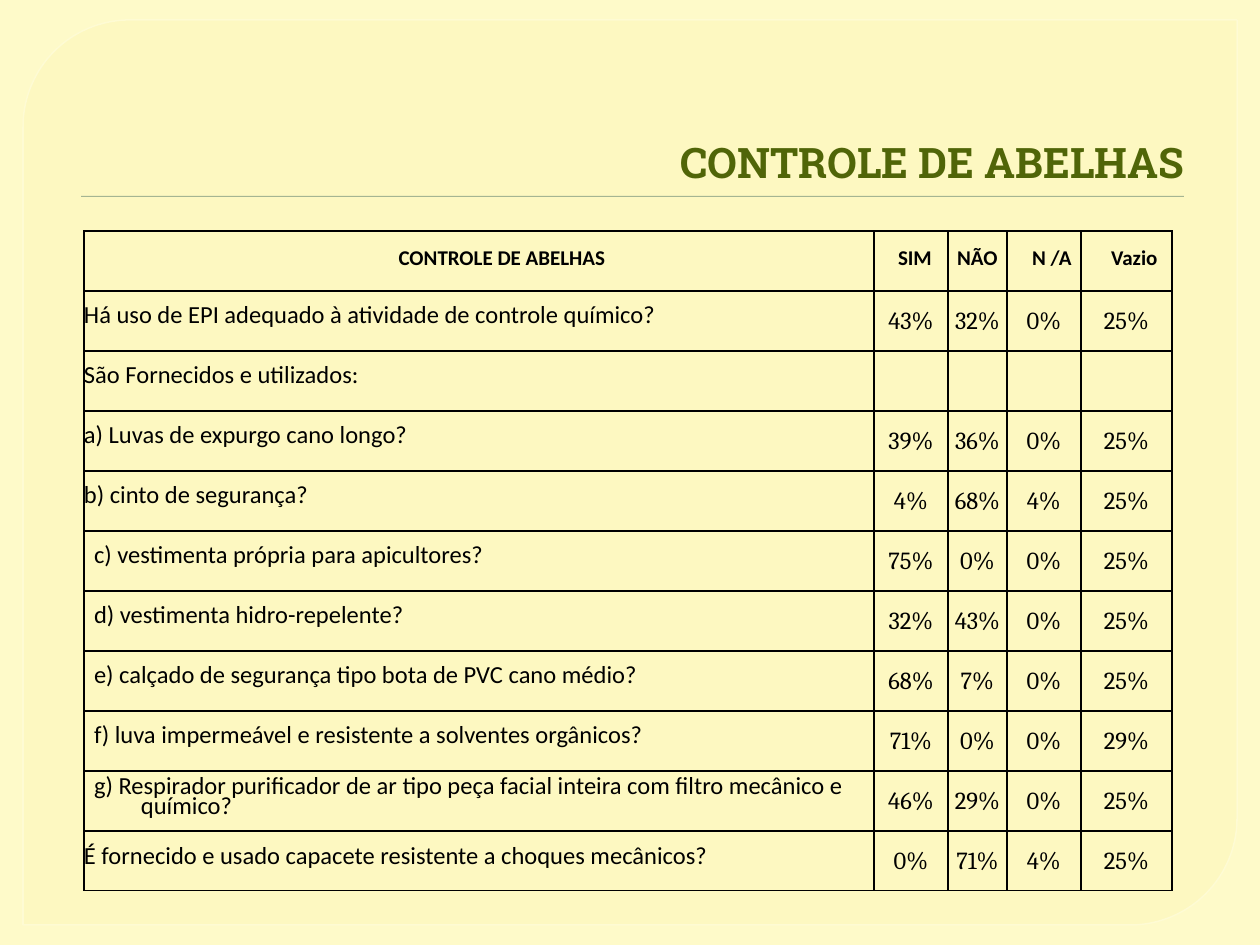
from lxml import etree
from pptx import Presentation
from pptx import util as u
from pptx.dml.color import RGBColor
from pptx.enum import shapes, text
from pptx.oxml import ns

COLORS = {
    "back": "FEFAC9", "panel": "FDF8BE", "edge": "FFFCD6",
    "rule": "A5B592", "title": "506508", "ink": "000000",
}
COLS = [790, 74, 59, 74, 91]
ROW = 60
HANG = 47
# label, left margin, line spacing in points
HEADS = [
    ("CONTROLE DE ABELHAS", 78, 11.2), ("SIM", 40, 11.3), ("NÃO", 32, 11.3),
    ("N /A", 48, 11.5), ("Vazio", 48, 11.5),
]
# question, left margin, line spacing in points, percentages
ROWS = [
    ("Há uso de EPI adequado à atividade de controle químico?", 47, 10.5, [43, 32, 0, 25]),
    ("São Fornecidos e utilizados:", 47, 10.5, []),
    ("a) Luvas de expurgo cano longo?", 47, 10.5, [39, 36, 0, 25]),
    ("b) cinto de segurança?", 47, 10.5, [4, 68, 4, 25]),
    ("c) vestimenta própria para apicultores?", 57, 10.5, [75, 0, 0, 25]),
    ("d) vestimenta hidro-repelente?", 57, 10.5, [32, 43, 0, 25]),
    ("e) calçado de segurança tipo bota de PVC cano médio?", 57, 10.5, [68, 7, 0, 25]),
    ("f) luva impermeável e resistente a solventes orgânicos?", 57, 10.5, [71, 0, 0, 29]),
    ("g) Respirador purificador de ar tipo peça facial inteira com filtro mecânico e químico?",
     57, 11.5, [46, 29, 0, 25]),
    ("É fornecido e usado capacete resistente a choques mecânicos?", 47, 11.5, [0, 71, 4, 25]),
]
LEFT, MID, RIGHT = text.PP_ALIGN.LEFT, text.PP_ALIGN.CENTER, text.PP_ALIGN.RIGHT


def px(n):
    return u.Emu(round(n * 914400 / 126))


def rgb(name):
    return RGBColor.from_string(COLORS[name])


def sub(node, tag, **attrs):
    item = etree.SubElement(node, ns.qn(tag))
    for key, val in attrs.items():
        item.set(key, str(val))
    return item


def fade(fill, pct):
    """Make a solid fill partly transparent."""
    for node in fill.iter(ns.qn("a:srgbClr")):
        sub(node, "a:alpha", val=pct * 1000)


def write(para, words, align, left, hang, space, **font):
    para.alignment = align
    para.line_spacing = space
    props = para._p.get_or_add_pPr()
    props.set("marL", str(px(left)))
    props.set("indent", str(px(-hang)))
    run = para.add_run()
    run.text = words
    color = font.pop("color", "ink")
    for key, val in font.items():
        setattr(run.font, key, val)
    run.font.color.rgb = rgb(color)


def block(slide, kind, box, fill):
    shape = slide.shapes.add_shape(kind, *map(px, box))
    shape.shadow.inherit = False
    shape.fill.solid()
    shape.fill.fore_color.rgb = rgb(fill)
    shape.line.fill.background()
    return shape


def panel(slide):
    shape = block(slide, shapes.MSO_SHAPE.ROUND_2_DIAG_RECTANGLE, (23, 20, 1214, 905), "panel")
    shape.adjustments[0] = 0.118
    shape.adjustments[1] = 0
    fade(shape._element.spPr.find(ns.qn("a:solidFill")), 65)
    shape.line.color.rgb = rgb("edge")
    shape.line.width = u.Pt(0.87)
    fade(shape._element.spPr.find(ns.qn("a:ln")), 88)


def rule(slide):
    shape = block(slide, shapes.MSO_SHAPE.RECTANGLE, (81, 196, 1103, 1), "rule")
    effects = shape._element.spPr.find(ns.qn("a:effectLst"))
    shade = sub(effects, "a:outerShdw", blurRad=12700, dist=12700, dir=5400000)
    sub(sub(shade, "a:srgbClr", val=COLORS["ink"]), "a:alpha", val=75000)


def title(slide):
    frame = slide.shapes.add_textbox(*map(px, (63, 35, 1134, 158))).text_frame
    frame.word_wrap = True
    frame.vertical_anchor = text.MSO_ANCHOR.BOTTOM
    write(frame.paragraphs[0], "CONTROLE DE ABELHAS", RIGHT, 8, 0, 1.0,
          name="Roboto Slab", size=u.Pt(24), bold=True, color="title")


def dress(cell):
    """Give a cell its borders, no fill and no margins."""
    props = cell._tc.get_or_add_tcPr()
    for side in ("L", "R", "T", "B"):
        line = sub(props, "a:ln" + side, w=12700)
        sub(sub(line, "a:solidFill"), "a:srgbClr", val=COLORS["ink"])
    cell.fill.background()
    cell.vertical_anchor = text.MSO_ANCHOR.MIDDLE
    for side in ("left", "right", "top", "bottom"):
        setattr(cell, "margin_" + side, 0)


def grid(slide):
    count = len(ROWS) + 1
    frame = slide.shapes.add_table(count, len(COLS), px(84), px(231),
                                   px(sum(COLS)), px(ROW * count))
    table = frame.table
    table.first_row = table.horz_banding = False
    for col, width in zip(table.columns, COLS):
        col.width = px(width)
    for row in table.rows:
        row.height = px(ROW)
    for cell in table.iter_cells():
        dress(cell)

    def put(row, col, *args, **font):
        write(table.cell(row, col).text_frame.paragraphs[0], *args, **font)

    for col, (words, left, space) in enumerate(HEADS):
        put(0, col, words, MID, left, 32, u.Pt(space),
            name="Calibri", size=u.Pt(12), bold=True)
    for row, (words, left, space, values) in enumerate(ROWS, 1):
        put(row, 0, words, LEFT, left, HANG, u.Pt(space),
            name="Calibri", size=u.Pt(14), bold=False)
        for col, val in enumerate(values, 1):
            put(row, col, f"{val}%", MID, HANG, HANG, 1.07,
                name="Cambria", size=u.Pt(14), bold=False)


def main():
    deck = Presentation()
    deck.slide_width, deck.slide_height = px(1260), px(945)
    slide = deck.slides.add_slide(deck.slide_layouts[6])
    slide.background.fill.solid()
    slide.background.fill.fore_color.rgb = rgb("back")
    for part in (panel, rule, title, grid):
        part(slide)
    deck.save("out.pptx")


if __name__ == "__main__":
    main()
